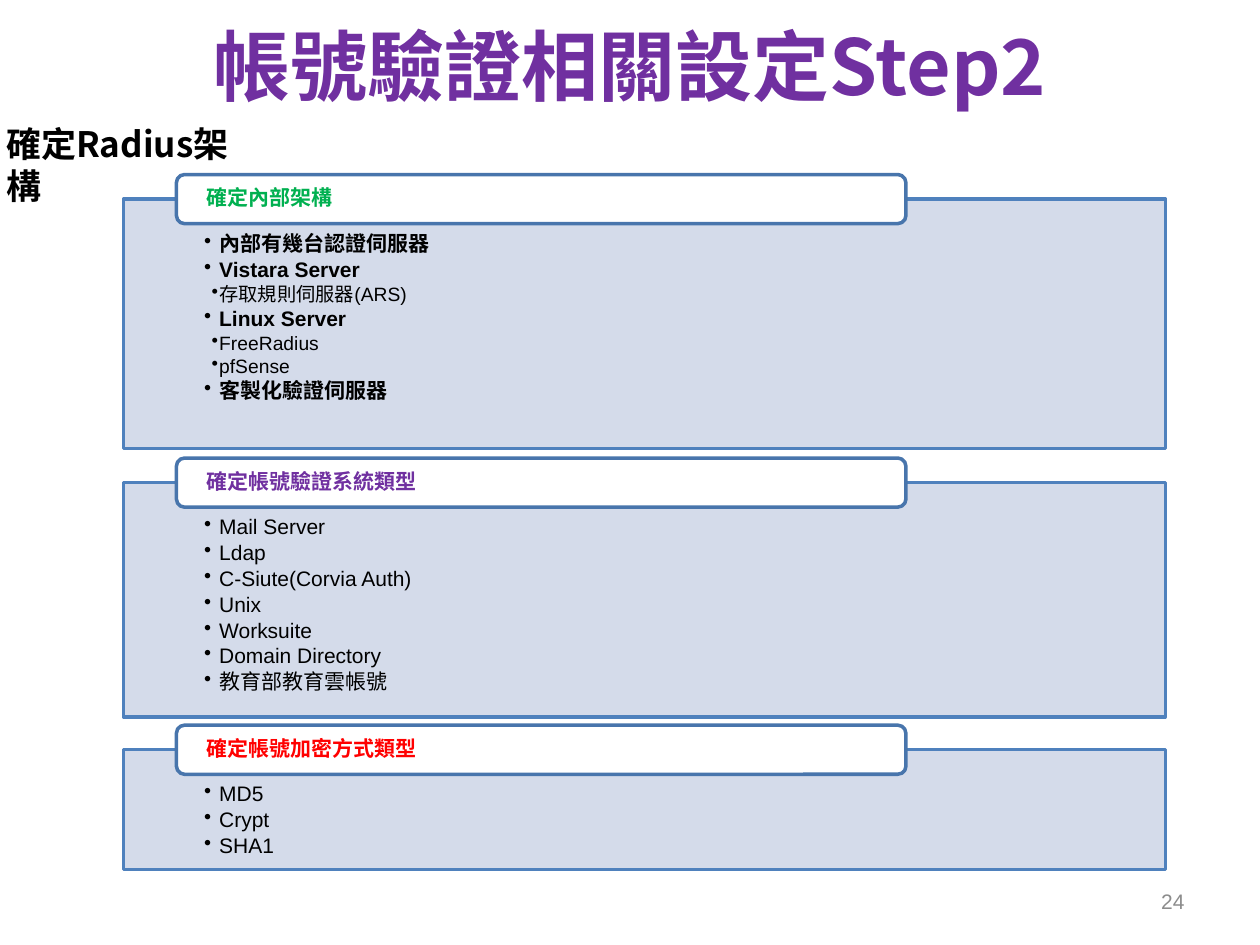
from lxml.etree import SubElement
from pptx import Presentation
from pptx.dml.color import RGBColor
from pptx.enum.shapes import MSO_SHAPE as Shape
from pptx.enum.text import MSO_ANCHOR as Anchor, PP_ALIGN as Align
from pptx.oxml.ns import qn
from pptx.util import Inches, Pt

CJK_FONT = "Noto Sans CJK SC"
BODY_FONT = "Arial"
COLORS = {
    "black": "000000", "purple": "7030A0", "green": "00B050", "red": "FF0000",
    "gray": "8C8C8C", "white": "FFFFFF", "panel": "D0D8E8",
    "panel_line": "4F81BD", "header_line": "4875AC",
}

TITLE = "帳號驗證相關設定Step2"
SUBTITLE = "確定Radius架構"
PAGE_NUMBER = "24"

# Each item is (text, level, bold).
SECTIONS = [
    {"heading": "確定內部架構", "color": "green", "top": 1.58, "height": 1.98,
     "items": [("內部有幾台認證伺服器", 1, True), ("Vistara Server", 1, True),
               ("存取規則伺服器(ARS)", 2, False), ("Linux Server", 1, True),
               ("FreeRadius", 2, False), ("pfSense", 2, False),
               ("客製化驗證伺服器", 1, True)]},
    {"heading": "確定帳號驗證系統類型", "color": "purple", "top": 3.83, "height": 1.86,
     "items": [(text, 1, False) for text in (
         "Mail Server", "Ldap", "C-Siute(Corvia Auth)", "Unix", "Worksuite",
         "Domain Directory", "教育部教育雲帳號")]},
    {"heading": "確定帳號加密方式類型", "color": "red", "top": 5.95, "height": 0.95,
     "items": [(text, 1, False) for text in ("MD5", "Crypt", "SHA1")]},
]

PANEL_LEFT, PANEL_WIDTH = 0.98, 8.27
HEADER_LEFT, HEADER_WIDTH, HEADER_HEIGHT = 1.4, 5.79, 0.39
LEVELS = {  # size, hanging indent in inches, space after in points
    1: (12, 0.12, 1.8),
    2: (11, 0.06, 1.4),
}


def rgb(name):
    return RGBColor.from_string(COLORS[name])


def format_runs(paragraph, size, color, font=CJK_FONT, bold=False):
    for run in paragraph.runs:
        run.font.size = Pt(size)
        run.font.bold = bold
        run.font.name = font
        run.font.color.rgb = rgb(color)
        SubElement(run.font._element, qn("a:ea"), typeface=CJK_FONT)


def set_insets(text_frame, left, top, right, bottom):
    text_frame.margin_left, text_frame.margin_top = Inches(left), Inches(top)
    text_frame.margin_right, text_frame.margin_bottom = Inches(right), Inches(bottom)


def add_label(slide, box, text, size, color, align=Align.LEFT, anchor=Anchor.TOP, **font):
    text_frame = slide.shapes.add_textbox(*map(Inches, box)).text_frame
    text_frame.word_wrap = True
    text_frame.vertical_anchor = anchor
    text_frame.text = text
    paragraph = text_frame.paragraphs[0]
    paragraph.alignment = align
    format_runs(paragraph, size, color, **font)


def add_box(slide, preset, box, fill, line):
    shape = slide.shapes.add_shape(preset, *map(Inches, box))
    shape.shadow.inherit = False
    shape.fill.solid()
    shape.fill.fore_color.rgb = rgb(fill)
    shape.line.color.rgb = rgb(line)
    shape.line.width = Pt(2)
    shape.text_frame.word_wrap = True
    return shape


def add_bullet(paragraph, level):
    """Style the paragraph as a bullet and return its text size."""
    size, hanging, space_after = LEVELS[level]
    properties = paragraph._p.get_or_add_pPr()
    properties.set("marL", str(Inches(0.12)))
    properties.set("indent", str(-Inches(hanging)))
    SubElement(properties, qn("a:buChar"), char="•")
    paragraph.level = level
    paragraph.alignment = Align.LEFT
    paragraph.line_spacing = 0.9
    paragraph.space_after = Pt(space_after)
    return size


def add_section(slide, section):
    """Draw a bulleted panel with its heading straddling the top edge."""
    top = section["top"]
    panel = add_box(slide, Shape.RECTANGLE,
                    (PANEL_LEFT, top, PANEL_WIDTH, section["height"]), "panel", "panel_line")
    panel_color = panel.fill._xPr.find(qn("a:solidFill"))[0]
    SubElement(panel_color, qn("a:alpha"), val="90000")
    text_frame = panel.text_frame
    text_frame.vertical_anchor = Anchor.TOP
    set_insets(text_frame, 0.64, 0.27, 0.64, 0.09)
    text_frame.text = "\n".join(text for text, _, _ in section["items"])
    for paragraph, (_, level, bold) in zip(text_frame.paragraphs, section["items"]):
        size = add_bullet(paragraph, level)
        format_runs(paragraph, size, "black", BODY_FONT, bold)

    header = add_box(slide, Shape.ROUNDED_RECTANGLE,
                     (HEADER_LEFT, top - HEADER_HEIGHT / 2, HEADER_WIDTH, HEADER_HEIGHT),
                     "white", "header_line")
    text_frame = header.text_frame
    text_frame.vertical_anchor = Anchor.MIDDLE
    set_insets(text_frame, 0.22, 0, 0.22, 0)
    text_frame.text = section["heading"]
    paragraph = text_frame.paragraphs[0]
    paragraph.alignment = Align.LEFT
    paragraph.line_spacing = 0.9
    format_runs(paragraph, 12, section["color"], bold=True)


def main():
    presentation = Presentation()
    presentation.slide_width, presentation.slide_height = Inches(10), Inches(7.5)
    slide = presentation.slides.add_slide(presentation.slide_layouts[6])
    add_label(slide, (0.5, -0.11, 9, 1.25), TITLE, 44, "purple",
              Align.CENTER, Anchor.MIDDLE, bold=True)
    add_label(slide, (7.17, 6.95, 2.33, 0.4), PAGE_NUMBER, 12, "gray",
              Align.RIGHT, Anchor.MIDDLE, font=BODY_FONT)
    for section in SECTIONS:
        add_section(slide, section)
    add_label(slide, (-0.05, 0.92, 2.24, 0.44), SUBTITLE, 20, "black", bold=True)
    presentation.save("out.pptx")


if __name__ == "__main__":
    main()
